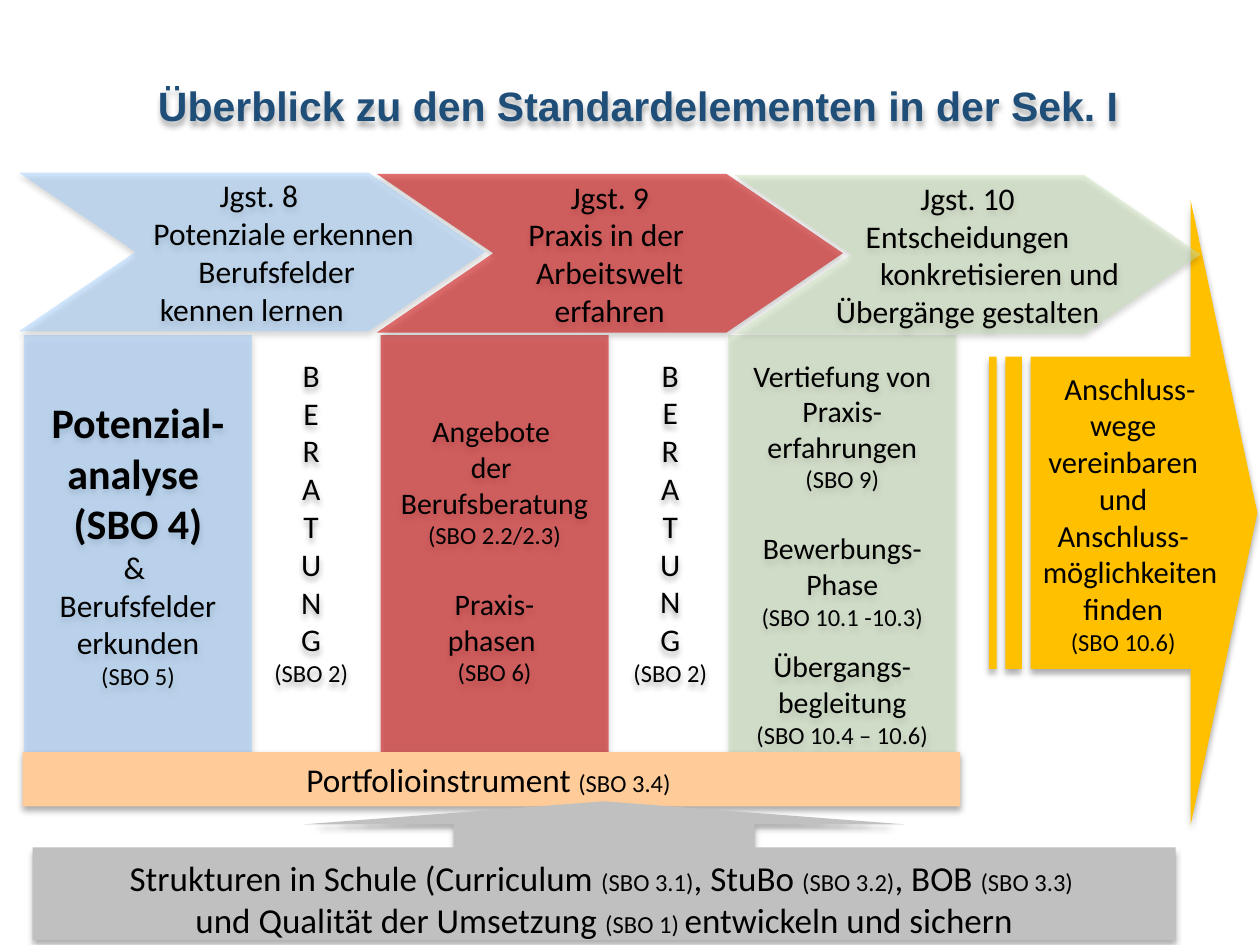
from lxml import etree
from pptx import Presentation
from pptx.dml.color import RGBColor
from pptx.enum.shapes import MSO_SHAPE
from pptx.enum.text import MSO_ANCHOR, MSO_AUTO_SIZE, PP_ALIGN
from pptx.oxml.ns import qn
from pptx.util import Inches, Pt

RECT, OVAL = MSO_SHAPE.RECTANGLE, MSO_SHAPE.OVAL
CHEVRON, CALLOUT = MSO_SHAPE.CHEVRON, MSO_SHAPE.UP_ARROW_CALLOUT
TOP, MIDDLE = MSO_ANCHOR.TOP, MSO_ANCHOR.MIDDLE
CENTER = PP_ALIGN.CENTER
NO_FIT = MSO_AUTO_SIZE.NONE
BLUE, RED, GREEN = "99CCFF", "CC0000", "C5E0B4"
SMALL = 14  # size of the SBO references


def color(code):
    return RGBColor.from_string(code)


def set_alpha(node, share):
    etree.SubElement(node, qn("a:alpha")).set("val", str(share * 1000))


def add_shadow(shape):
    shape.shadow.inherit = False
    effects = shape._element.spPr.find(qn("a:effectLst"))
    outer = etree.SubElement(effects, qn("a:outerShdw"), blurRad=str(Pt(3.5)),
                             dist=str(Pt(2.2)), dir="5400000", rotWithShape="0")
    tone = etree.SubElement(outer, qn("a:srgbClr"), val="000000")
    set_alpha(tone, 32)


def paint(shape, fill=None, alpha=None):
    """Set fill, opacity and shadow; no outline."""
    if fill:
        shape.fill.solid()
        shape.fill.fore_color.rgb = color(fill)
        if alpha:
            set_alpha(shape._element.spPr.find(".//" + qn("a:srgbClr")), alpha)
    else:
        shape.fill.background()
    shape.line.fill.background()
    add_shadow(shape)


def write(shape, text, size=18, bold=False, font="Calibri", ink="000000",
          indent=0, before=0):
    """Add one paragraph; every second part between bars is a small run."""
    frame = shape.text_frame
    para = frame.paragraphs[0]
    if para.runs:
        para = frame.add_paragraph()
    para.alignment = CENTER
    para.space_before = Pt(before)
    if indent:
        para._p.get_or_add_pPr().set("marL", str(Inches(indent)))
    for i, part in enumerate(text.split("|")):
        if part:
            run = para.add_run()
            run.text = part
            run.font.name = font
            run.font.size = Pt(SMALL if i % 2 else size)
            run.font.bold = bold
            run.font.color.rgb = color(ink)


def set_frame(shape, anchor=MIDDLE, top=0.05, bottom=0.05):
    frame = shape.text_frame
    frame.word_wrap = False
    frame.auto_size = NO_FIT
    frame.vertical_anchor = anchor
    frame.margin_top, frame.margin_bottom = Inches(top), Inches(bottom)


def add_lines(shape, lines, size):
    """Lines are strings or pairs of a string and its format."""
    for line in lines:
        text, form = (line, {}) if isinstance(line, str) else line
        write(shape, text, **{"size": size, **form})


def add_box(slide, kind, place, lines, fill=None, alpha=None, adjust=(),
            size=18, top=0.05, bottom=0.05):
    shape = slide.shapes.add_shape(kind, *map(Inches, place))
    for i, value in enumerate(adjust):
        shape.adjustments[i] = value
    paint(shape, fill, alpha)
    set_frame(shape, top=top, bottom=bottom)
    add_lines(shape, lines, size)


def add_title(slide):
    title = slide.shapes.title
    title.left, title.top = Inches(0.33), Inches(0.59)
    title.width, title.height = Inches(9.2), Inches(0.62)
    set_frame(title, anchor=TOP)
    add_shadow(title)
    write(title, "Überblick zu den Standardelementen in der Sek. I", size=23.4,
          bold=True, font="Arial", ink="1F4E79", indent=0.27)


def add_column(slide, left, fill, alpha, lines, **form):
    add_box(slide, RECT, (left, 2.66, 1.81, 3.31), lines, fill, alpha, **form)


def add_grade(slide, left, top, fill, alpha, lines):
    add_box(slide, CHEVRON, (left, top, 3.7, 1.26), lines, fill, alpha, [0.734])


def add_advice(slide, left, top, height):
    add_box(slide, OVAL, (left, top, 1.34, height), [*"BERATUNG", "|(SBO 2)"])


def add_arrow(slide):
    """Striped arrow on the right: a head and two bars, in 1/100 inch."""
    high, low = 283, 531
    head = [(945, 159), (945, high), (818, high), (818, low),
            (945, low), (945, 655), (998, 407)]
    bars = [[(x, high), (x, low), (end, low), (end, high)]
            for x, end in ((798, 811), (785, 791))]
    pen = slide.shapes.build_freeform(*head[0], scale=Inches(0.01))
    pen.add_line_segments(head[1:], close=True)
    for bar in bars:
        pen.move_to(*bar[0])
        pen.add_line_segments(bar[1:], close=True)
    arrow = pen.convert_to_shape()
    paint(arrow, "FFC000")
    set_frame(arrow)
    add_lines(arrow, [("Anschluss-", {"indent": 0.11}), "wege", "vereinbaren",
                      "und", "Anschluss-", ("möglichkeiten", {"indent": 0.11}),
                      "finden", "|(SBO 10.6)"], 17.5)


def main():
    deck = Presentation()
    deck.slide_width, deck.slide_height = Inches(10), Inches(7.5)
    slide = deck.slides.add_slide(deck.slide_layouts[5])
    add_title(slide)

    # Columns below the grades
    big = {"size": 24, "bold": True}
    add_column(slide, 0.19, BLUE, 48, [
        ("Potenzial-", big), ("analyse ", big), ("(SBO 4)", big),
        "& ", "Berufsfelder", "erkunden", "|(SBO 5)"])
    add_column(slide, 3.02, RED, 55, [
        "Angebote ", "der ", "Berufsberatung", "|(SBO 2.2/2.3)",
        ("Praxis-", {"before": 20.7}), "phasen| ", "|(SBO 6)"],
        size=17, top=0.15)
    add_column(slide, 5.78, GREEN, 45, [
        "Vertiefung von", "Praxis-", "erfahrungen", "|(SBO 9)",
        ("Bewerbungs-", {"before": 20.7}), "Phase", "|(SBO 10.1 -10.3)",
        ("Übergangs-", {"before": 9.8}), "begleitung", "|(SBO 10.4 – 10.6)"],
        size=17, top=0.15, bottom=0)

    # Grades, advice and follow-up arrow
    add_advice(slide, 1.8, 2.63, 3.02)
    add_grade(slide, 0.15, 1.37, BLUE, 45, [
        ("Jgst. 8", {"indent": 0.11}),
        ("Potenziale erkennen ", {"indent": 0.56}),
        ("Berufsfelder ", {"indent": 0.45}), "kennen lernen"])
    add_arrow(slide)
    add_grade(slide, 2.99, 1.38, RED, 55, [
        "Jgst. 9", "Praxis in der ", "Arbeitswelt", "erfahren"])
    add_grade(slide, 5.83, 1.39, GREEN, 45, [
        "Jgst. 10", "Entscheidungen",
        ("konkretisieren und", {"indent": 0.51}), "Übergänge gestalten"])
    add_advice(slide, 4.65, 2.64, 3)

    # Foundation
    add_box(slide, RECT, (0.18, 5.97, 7.44, 0.43),
            ["Portfolioinstrument |(SBO 3.4) "], "FFCC99", size=19)
    add_box(slide, CALLOUT, (0.26, 6.36, 9.07, 1.1), [
        "Strukturen in Schule (Curriculum |(SBO 3.1)|, StuBo |(SBO 3.2)"
        "|, BOB |(SBO 3.3) ",
        "und Qualität der Umsetzung |(SBO 1) |entwickeln und sichern"],
        "C0C0C0", adjust=[2.172, 2.172, 0.167, 0.667], size=20,
        top=0.08, bottom=0)

    deck.save("out.pptx")


if __name__ == "__main__":
    main()
